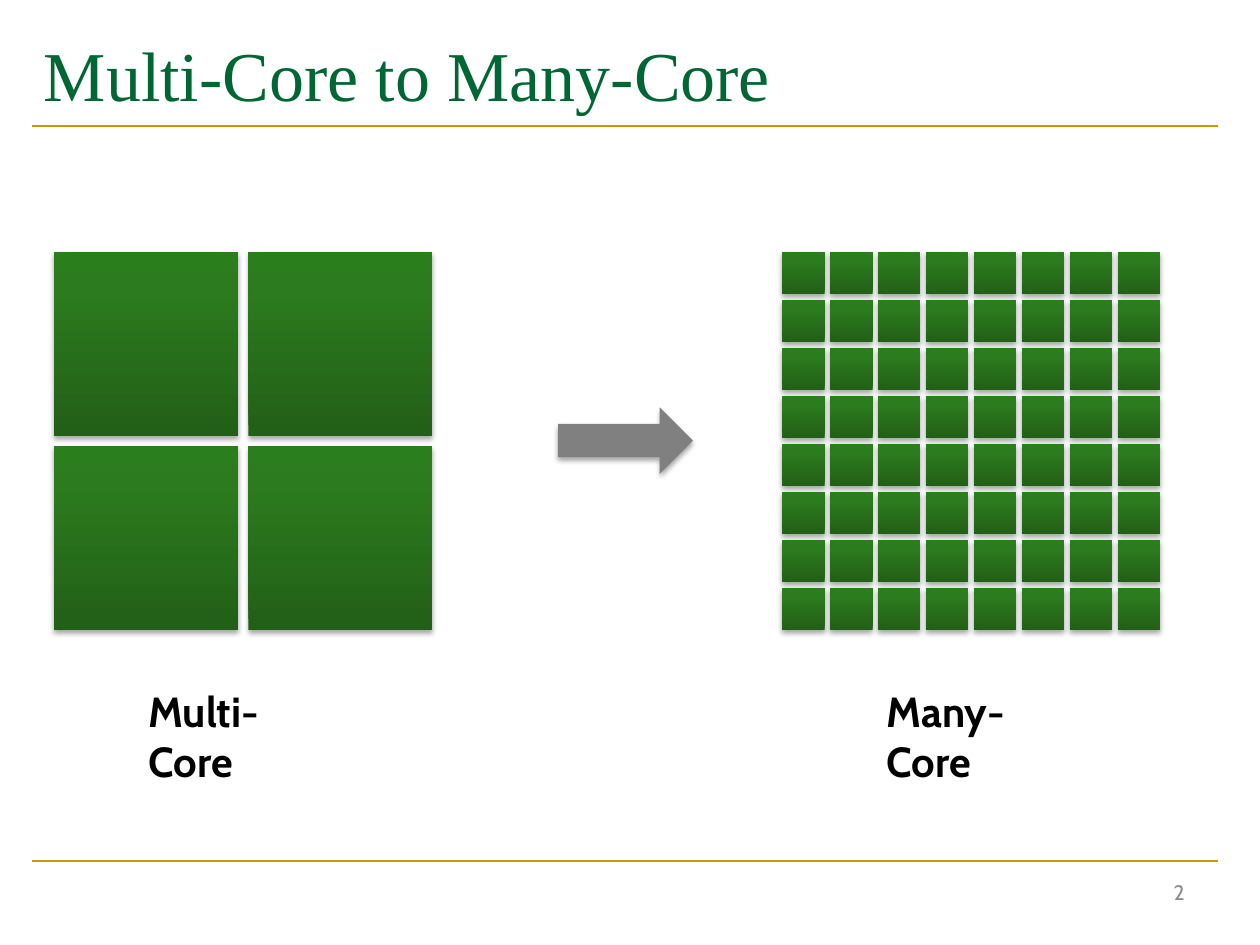
from copy import deepcopy
from itertools import product

from lxml.etree import SubElement
from pptx import Presentation
from pptx.dml.color import RGBColor as RGB
from pptx.enum.shapes import MSO_CONNECTOR as LINE, MSO_SHAPE as SHAPE
from pptx.enum.text import MSO_ANCHOR as ANCHOR, PP_ALIGN as ALIGN
from pptx.oxml.ns import qn
from pptx.util import Pt

HEX = {
    "title": "006633", "rule": "CC9900", "text": "000000",
    "page": "8C8C8C", "arrow": "808080", "shadow": "000000",
}
CORE = [(0, "225F17"), (0.8, "2C7B1E"), (1, "2B7E1C")]


def color(name):
    return RGB.from_string(HEX[name])


def text(slide, box, words, font, size, hue, bold=False,
         align=ALIGN.LEFT, anchor=ANCHOR.MIDDLE):
    frame = slide.shapes.add_textbox(*map(Pt, box)).text_frame
    frame.word_wrap = True
    frame.vertical_anchor = anchor
    para = frame.paragraphs[0]
    para.text = words
    para.alignment = align
    para.font.name = font
    para.font.size = Pt(size)
    para.font.bold = bold
    para.font.color.rgb = color(hue)
    return frame


def rule(slide, left, top, width):
    line = slide.shapes.add_connector(
        LINE.STRAIGHT, Pt(left), Pt(top), Pt(left + width), Pt(top))
    line.line.color.rgb = color("rule")
    line.line.width = Pt(1.5)
    SubElement(line._element.spPr, qn("a:effectLst"))


def shade(shape):
    """Give the shape a soft shadow straight below and no outline."""
    shape.line.fill.background()
    shape.shadow.inherit = False
    effects = shape._element.spPr.find(qn("a:effectLst"))
    outer = SubElement(effects, qn("a:outerShdw"), blurRad=str(Pt(3.1)),
                       dist=str(Pt(1.8)), dir="5400000", rotWithShape="0")
    tone = SubElement(outer, qn("a:srgbClr"), val=HEX["shadow"])
    SubElement(tone, qn("a:alpha"), val="35000")


def core(group, box):
    shape = group.shapes.add_shape(SHAPE.RECTANGLE, *map(Pt, box))
    fill = shape.fill
    fill.gradient()
    fill.gradient_angle = 90
    first = shape._element.spPr.find(".//" + qn("a:gs"))
    first.addnext(deepcopy(first))
    for stop, (place, tone) in zip(fill.gradient_stops, CORE):
        stop.position = place
        stop.color.rgb = RGB.from_string(tone)
    shade(shape)


def chip(slide, box, count, side):
    """Spread count x count square cores evenly over the box."""
    left, top, width, height = box
    group = slide.shapes.add_group_shape()
    across = (width - side) / (count - 1)
    down = (height - side) / (count - 1)
    for row, col in product(range(count), repeat=2):
        core(group, (left + col * across, top + row * down, side, side))


def label(slide, box, words):
    frame = text(slide, box, words, "Cabin", 24, "text", True,
                 anchor=ANCHOR.TOP)
    frame.margin_right = Pt(14)  # breaks the line at the hyphen


def arrow(slide, box):
    shape = slide.shapes.add_shape(SHAPE.RIGHT_ARROW, *map(Pt, box))
    shape.fill.solid()
    shape.fill.fore_color.rgb = color("arrow")
    shade(shape)


def header(slide, box):
    left, top, width, height = box
    rule(slide, left, top + height, width)
    text(slide, box, "Multi-Core to Many-Core", "Times New Roman", 40, "title")


def footer(slide, box):
    left, top, width, height = box
    rule(slide, left, top, width)
    text(slide, (left + 498, top, 168, height), "2", "Cabin", 12, "page",
         align=ALIGN.RIGHT)


def main():
    deck = Presentation()
    deck.slide_width, deck.slide_height = Pt(720), Pt(540)
    slide = deck.slides.add_slide(deck.slide_layouts[6])
    header(slide, (18, 12, 678, 60))
    chip(slide, (447, 144, 216, 216), 8, 24.25)
    chip(slide, (31, 144, 216, 216), 2, 105)
    label(slide, (77.75, 388, 123, 36), "Multi-Core")
    label(slide, (499.5, 388, 126, 36), "Many-Core")
    arrow(slide, (319, 232.75, 77, 38))
    footer(slide, (18, 492, 678, 36))
    deck.save("out.pptx")


if __name__ == "__main__":
    main()
